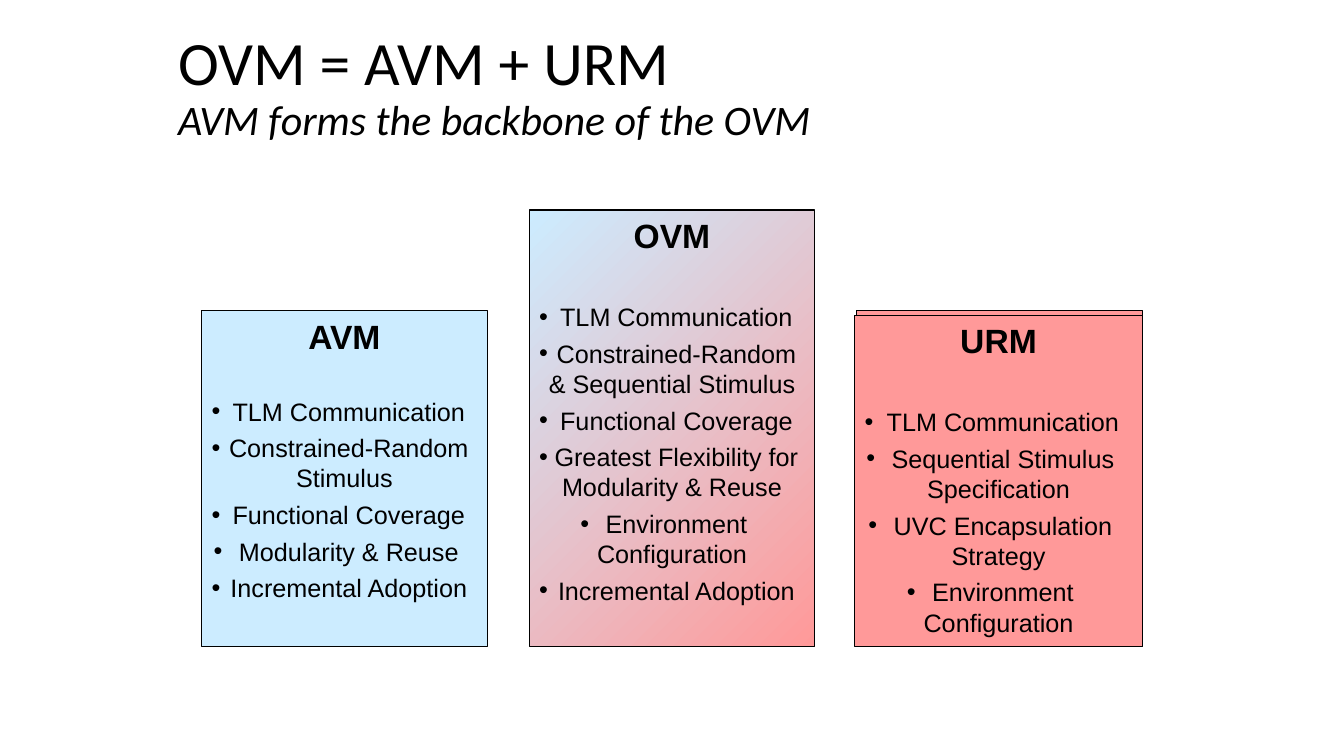
from pptx import Presentation
from pptx.dml.color import RGBColor
from pptx.enum.shapes import MSO_SHAPE as Shape
from pptx.enum.text import MSO_ANCHOR as Anchor, PP_ALIGN as Align
from pptx.oxml.ns import qn
from pptx.util import Pt
from lxml.etree import SubElement

PX = 9525
BLACK = RGBColor(0x00, 0x00, 0x00)
BLUE = RGBColor(0xCC, 0xEC, 0xFF)
RED = RGBColor(0xFF, 0x99, 0x99)

HEAD = dict(name="Arial", size=Pt(24), bold=True)
ITEM = dict(name="Arial", size=Pt(18), bold=False)
TITLE = dict(name="Calibri", size=Pt(44), italic=False)
SUB = dict(name="Calibri", size=Pt(30), italic=True)

# box, colours, gap under the heading in points, heading, items
CARDS = [
    ((504, 200, 272, 416), (BLUE, RED), 33, "OVM", [
        "TLM Communication", "Constrained-Random & Sequential Stimulus",
        "Functional Coverage", "Greatest Flexibility for Modularity & Reuse",
        "Environment Configuration", "Incremental Adoption"]),
    ((192, 296, 272, 320), (BLUE,), 28.5, "AVM", [
        "TLM Communication", "Constrained-Random Stimulus",
        "Functional Coverage", "Modularity & Reuse", "Incremental Adoption"]),
    ((814, 300, 274, 316), (RED,), 33, "URM", [
        "TLM Communication", "Sequential Stimulus Specification",
        "UVC Encapsulation\vStrategy", "Environment Configuration"]),
]
BACK = (816, 296, 272, 320)
HANG = 24


def scale(box):
    return [n * PX for n in box]


def style(font, form):
    for key, val in form.items():
        setattr(font, key, val)
    font.color.rgb = BLACK


def panel(slide, box, tints):
    """Add an outlined rectangle, with a diagonal blend for two tints."""
    rect = slide.shapes.add_shape(Shape.RECTANGLE, *scale(box))
    rect.shadow.inherit = False
    rect.line.color.rgb = BLACK
    rect.line.width = Pt(0.75)
    if len(tints) == 1:
        rect.fill.solid()
        rect.fill.fore_color.rgb = tints[0]
    else:
        rect.fill.gradient()
        rect.fill.gradient_angle = 315
        for stop, tint in zip(rect.fill.gradient_stops, tints):
            stop.color.rgb = tint
    return rect


def bullet(par):
    props = par._p.get_or_add_pPr()
    props.set("marL", "0")
    props.set("indent", str(-HANG * PX))
    SubElement(props, qn("a:buFont"), typeface="Arial")
    SubElement(props, qn("a:buChar"), char="•")


def card(slide, box, tints, gap, head, items):
    frame = panel(slide, box, tints).text_frame
    frame.word_wrap = True
    frame.vertical_anchor = Anchor.TOP
    top = frame.paragraphs[0]
    top.text = head
    top.alignment = Align.CENTER
    style(top.font, HEAD)
    for num, item in enumerate(items):
        par = frame.add_paragraph()
        par.text = item
        par.alignment = Align.CENTER
        par.space_before = Pt(4.5 if num else gap)
        bullet(par)
        style(par.font, ITEM)


def title(slide, box):
    hold = slide.shapes.title
    hold.left, hold.top, hold.width, hold.height = scale(box)
    frame = hold.text_frame
    frame.word_wrap = True
    frame.vertical_anchor = Anchor.MIDDLE
    par = frame.paragraphs[0]
    par.alignment = Align.LEFT
    par.line_spacing = 0.9
    main = par.add_run()
    main.text = "OVM = AVM + URM"
    style(main.font, TITLE)
    par.add_line_break()
    sub = par.add_run()
    sub.text = "AVM forms the backbone of the OVM"
    style(sub.font, SUB)


def main():
    deck = Presentation()
    deck.slide_width, deck.slide_height = scale((1280, 720))
    slide = deck.slides.add_slide(deck.slide_layouts[5])
    title(slide, (160, 24, 920, 120))
    panel(slide, BACK, (RED,))
    for data in CARDS:
        card(slide, *data)
    deck.save("out.pptx")


if __name__ == "__main__":
    main()
